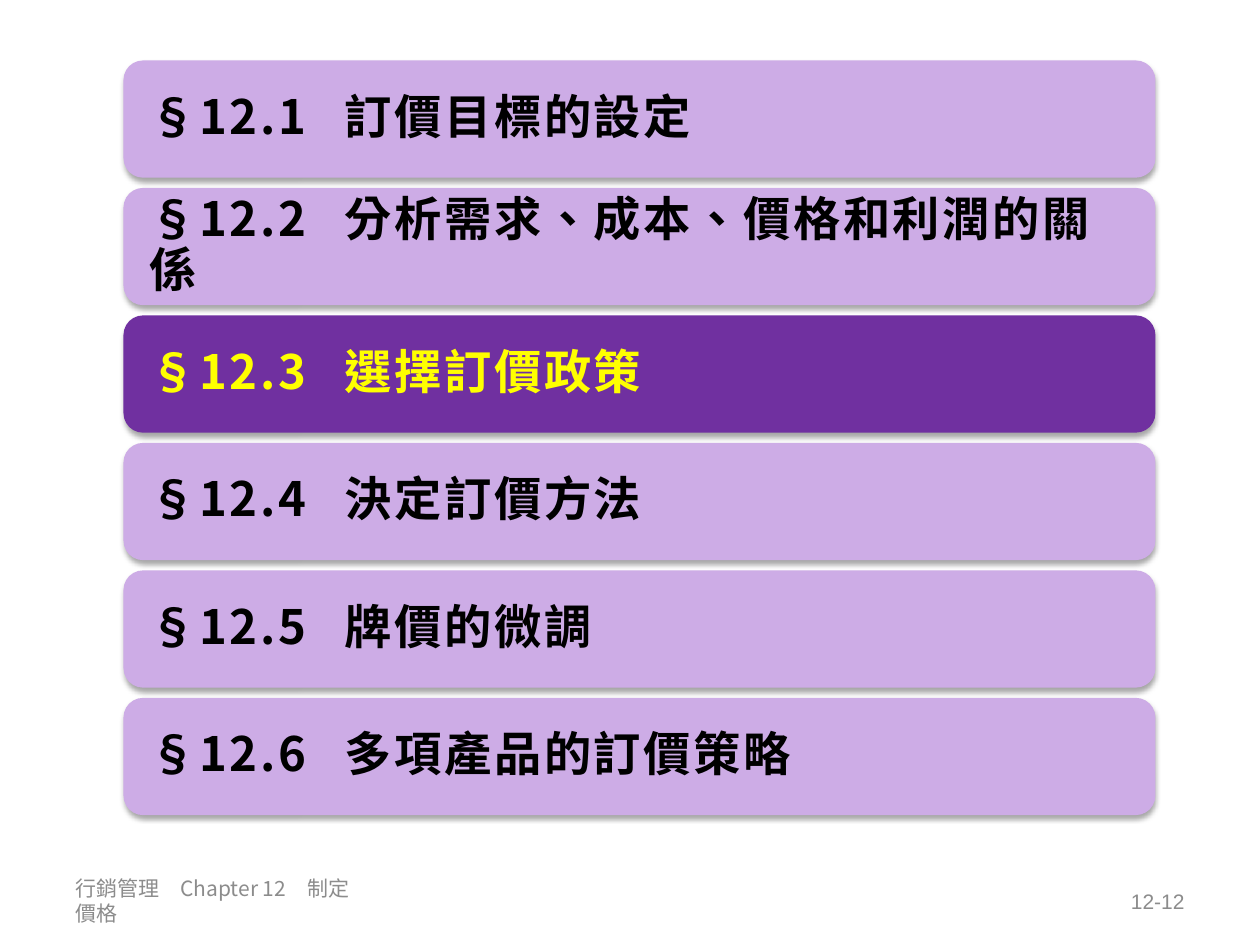
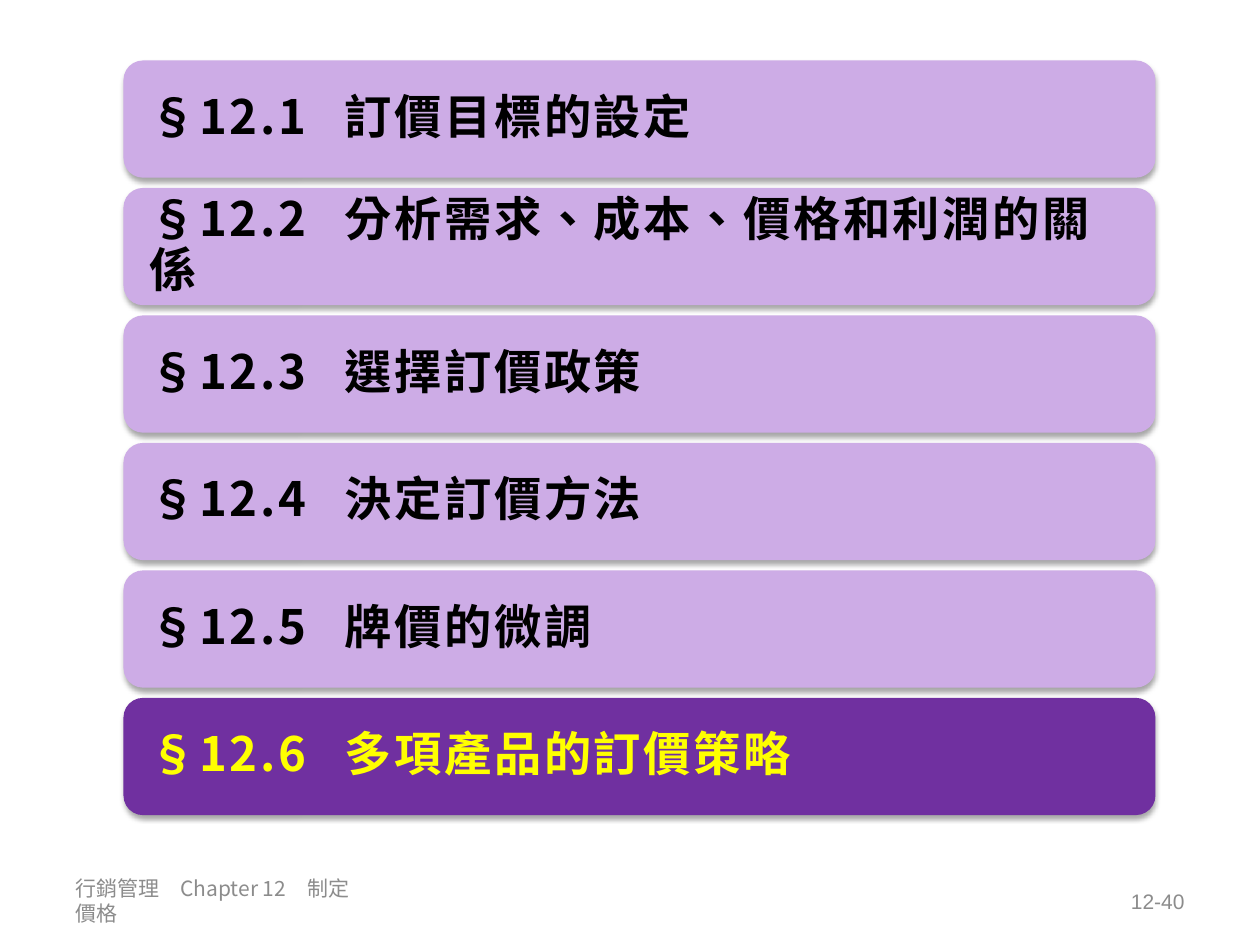
"""Build the chapter agenda slides, each with one section highlighted."""
from collections import namedtuple

from lxml import etree
from pptx import Presentation
from pptx.dml.color import RGBColor
from pptx.enum.shapes import MSO_SHAPE
from pptx.enum.text import MSO_ANCHOR, PP_ALIGN
from pptx.oxml.ns import qn
from pptx.util import Inches, Pt

ROUNDED = MSO_SHAPE.ROUNDED_RECTANGLE
MIDDLE = MSO_ANCHOR.MIDDLE
LEFT, RIGHT = PP_ALIGN.LEFT, PP_ALIGN.RIGHT

Box = namedtuple("Box", "left top width height")

SLIDE_WIDTH, SLIDE_HEIGHT = 10, 7.5
COLOURS = {
    "bar": "CDACE6",
    "bar_text": "000000",
    "active": "7030A0",
    "active_text": "FFFF00",
    "footer": "8C8C8C",
    "shadow": "000000",
}
CJK_FONT, LATIN_FONT = "Noto Sans CJK SC", "Arial"

AGENDA = Box(0.98, 0.48, 8.19, 5.99)
BAR_SHARE = 0.92
BAR_MARGIN = 0.16
TITLE_TAB = 1.55
FOOTER = Box(0.05 * SLIDE_WIDTH, 6.95, 0.9 * SLIDE_WIDTH, 0.4)
FOOTER_TEXT = "行銷管理　Chapter 12　制定價格"

SECTIONS = [
    "訂價目標的設定",
    "分析需求、成本、價格和利潤的關係",
    "選擇訂價政策",
    "決定訂價方法",
    "牌價的微調",
    "多項產品的訂價策略",
]
PAGES = [("12-12", 3), ("12-40", 6)]


def inches(box):
    """Return the four sides of a box as lengths."""
    return [Inches(side) for side in box]


def add_text(para, text, *, size, colour, font=CJK_FONT, bold=False, spacing=0):
    """Add a formatted span of text to a paragraph."""
    span = para.add_run()
    span.text = text
    span.font.size = Pt(size)
    span.font.bold = bold
    span.font.name = font
    span.font.color.rgb = RGBColor.from_string(COLOURS[colour])
    properties = span.font._element
    properties.set("lang", "zh-TW")
    properties.set("spc", str(round(spacing * 100)))
    etree.SubElement(properties, qn("a:ea"), typeface=CJK_FONT)


def add_shadow(shape):
    """Give a shape a soft shadow that falls straight down."""
    shape.shadow.inherit = False
    effects = shape._element.spPr.find(qn("a:effectLst"))
    shadow = etree.SubElement(
        effects, qn("a:outerShdw"), blurRad=str(Pt(3.1)), dist=str(Pt(1.8)),
        dir=str(90 * 60000), rotWithShape="0")
    colour = etree.SubElement(shadow, qn("a:srgbClr"), val=COLOURS["shadow"])
    etree.SubElement(colour, qn("a:alpha"), val="35000")


def add_tab(para, position):
    """Set a left tab stop on a paragraph."""
    tabs = etree.SubElement(para._p.get_or_add_pPr(), qn("a:tabLst"))
    etree.SubElement(tabs, qn("a:tab"), pos=str(Inches(position)), algn="l")


def add_bar(page, box, number, title, active):
    """Draw one section bar with its number and title."""
    bar = page.shapes.add_shape(ROUNDED, *inches(box))
    bar.fill.solid()
    bar.fill.fore_color.rgb = RGBColor.from_string(
        COLOURS["active" if active else "bar"])
    bar.line.fill.background()
    add_shadow(bar)
    frame = bar.text_frame
    frame.word_wrap = True
    frame.vertical_anchor = MIDDLE
    frame.margin_left = frame.margin_right = Inches(BAR_MARGIN)
    frame.margin_top = frame.margin_bottom = Inches(BAR_MARGIN)
    para = frame.paragraphs[0]
    para.alignment = LEFT
    para.line_spacing = 0.9
    para.space_after = Pt(9.5)
    add_tab(para, TITLE_TAB)
    style = {"size": 27, "bold": True, "spacing": 1.5,
             "colour": "active_text" if active else "bar_text"}
    add_text(para, f"§12.{number}\t", **style)
    add_text(para, title, font=LATIN_FONT, **style)


def add_agenda(page, box, active_number):
    """Stack the section bars evenly in a box."""
    bar_count = len(SECTIONS)
    row = box.height / (bar_count - 1 + BAR_SHARE)
    for index, title in enumerate(SECTIONS):
        place = Box(box.left, box.top + index * row, box.width, row * BAR_SHARE)
        number = index + 1
        add_bar(page, place, number, title, number == active_number)


def add_footer_part(page, box, text, font, alignment):
    """Write one footer text in a box."""
    frame = page.shapes.add_textbox(*inches(box)).text_frame
    frame.word_wrap = True
    frame.vertical_anchor = MIDDLE
    para = frame.paragraphs[0]
    para.alignment = alignment
    add_text(para, text, size=12, colour="footer", font=font)


def add_footer(page, box, page_number):
    """Place the chapter name at the left and the page number at the right."""
    name_width, number_width = 0.272 * box.width, 0.26 * box.width
    name_box = box._replace(width=name_width)
    number_box = box._replace(
        left=box.left + box.width - number_width, width=number_width)
    add_footer_part(page, name_box, FOOTER_TEXT, CJK_FONT, LEFT)
    add_footer_part(page, number_box, page_number, LATIN_FONT, RIGHT)


def main():
    """Build the deck and save it."""
    deck = Presentation()
    deck.slide_width = Inches(SLIDE_WIDTH)
    deck.slide_height = Inches(SLIDE_HEIGHT)
    blank = deck.slide_layouts[6]
    for page_number, active_number in PAGES:
        page = deck.slides.add_slide(blank)
        add_footer(page, FOOTER, page_number)
        add_agenda(page, AGENDA, active_number)
    deck.save("out.pptx")


if __name__ == "__main__":
    main()
